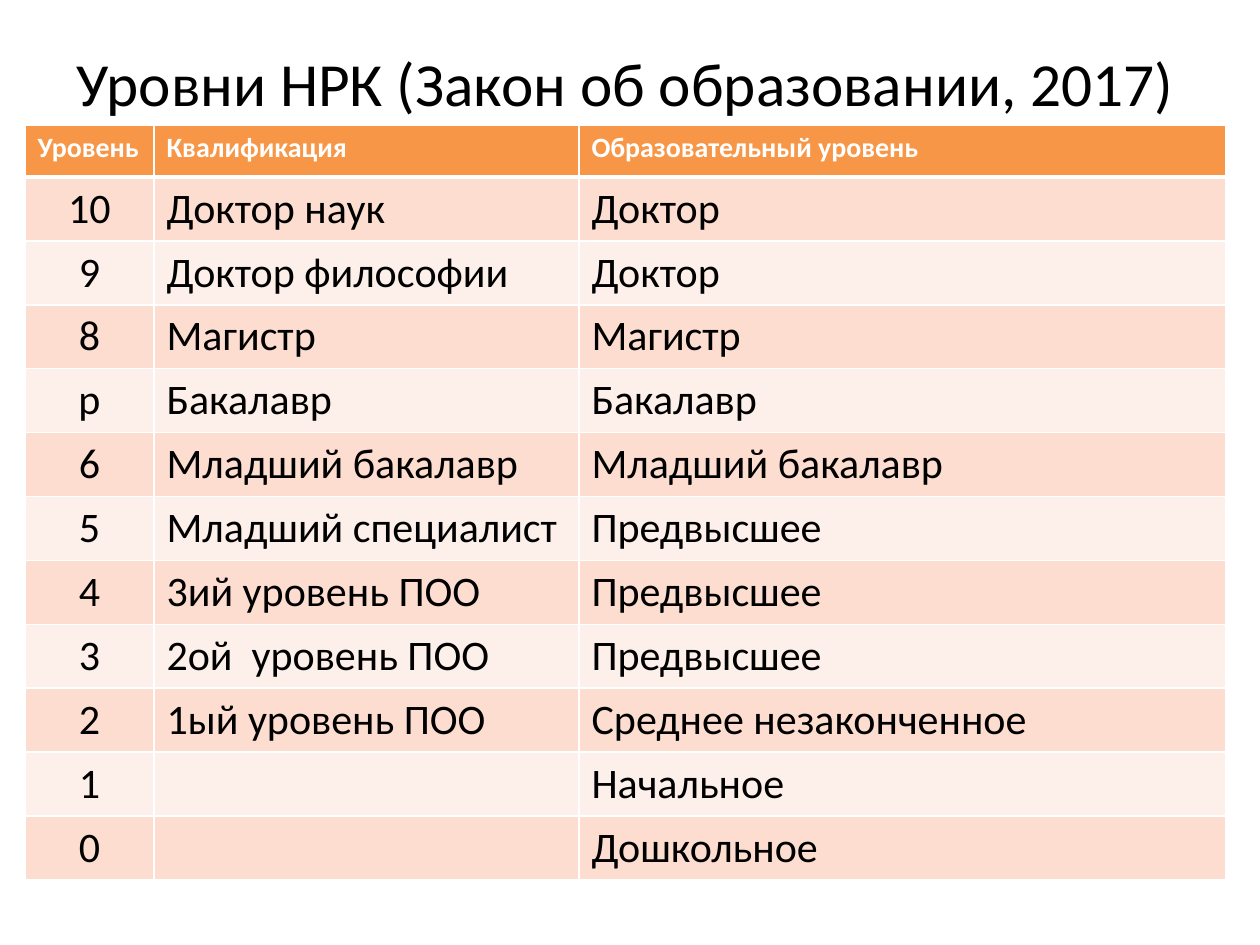
from dataclasses import dataclass

from lxml.etree import SubElement
from pptx import Presentation
from pptx.dml.color import RGBColor
from pptx.enum.text import MSO_ANCHOR, MSO_AUTO_SIZE, PP_ALIGN
from pptx.oxml.ns import qn
from pptx.util import Emu, Pt

PX_PER_INCH = 126
TITLE_ONLY = 5


@dataclass(frozen=True)
class Theme:
    font: str = "Calibri"
    text: str = "000000"
    header_text: str = "FFFFFF"
    header_fill: str = "F79646"
    bands: tuple = ("FCDDCF", "FDEFE9")
    border: str = "FFFFFF"
    title_size: int = 35
    header_size: int = 16
    body_size: int = 24


THEME = Theme()
TITLE = "Уровни НРК (Закон об образовании, 2017)"
HEADERS = ("Уровень", "Квалификация", "Образовательный уровень")
LEVELS = (
    ("10", "Доктор наук", "Доктор"),
    ("9", "Доктор философии", "Доктор"),
    ("8", "Магистр", "Магистр"),
    ("р", "Бакалавр", "Бакалавр"),
    ("6", "Младший бакалавр", "Младший бакалавр"),
    ("5", "Младший специалист", "Предвысшее"),
    ("4", "3ий уровень ПОО", "Предвысшее"),
    ("3", "2ой  уровень ПОО", "Предвысшее"),
    ("2", "1ый уровень ПОО", "Среднее незаконченное"),
    ("1", "", "Начальное"),
    ("0", "", "Дошкольное"),
)
COLUMN_WIDTHS = (129, 425, 647)
HEADER_HEIGHT, ROW_HEIGHT = 52, 63


def px(length):
    return Emu(round(length * 914400 / PX_PER_INCH))


def add_run(paragraph, text, size, color, bold=False):
    run = paragraph.add_run()
    run.text = text
    run.font.name = THEME.font
    run.font.size = Pt(size)
    run.font.bold = bold
    run.font.color.rgb = RGBColor.from_string(color)


def set_borders(cell, bottom_width):
    """Draw the cell's four lines; they must precede its fill in the XML."""
    properties = cell._tc.get_or_add_tcPr()
    for side, width in (("L", 1), ("R", 1), ("T", 1), ("B", bottom_width)):
        line = SubElement(properties, qn(f"a:ln{side}"), w=str(Pt(width)))
        fill = SubElement(line, qn("a:solidFill"))
        SubElement(fill, qn("a:srgbClr"), val=THEME.border)


def fill_cell(cell, text, size, color, fill, bold=False, centred=False, bottom_width=1):
    set_borders(cell, bottom_width)
    cell.fill.solid()
    cell.fill.fore_color.rgb = RGBColor.from_string(fill)
    paragraph = cell.text_frame.paragraphs[0]
    paragraph.alignment = PP_ALIGN.CENTER if centred else PP_ALIGN.LEFT
    if text:
        add_run(paragraph, text, size, color, bold)


def place_title(slide, left, top, width, height):
    title = slide.shapes.title
    title.left, title.top, title.width, title.height = map(px, (left, top, width, height))
    frame = title.text_frame
    frame.word_wrap = True
    frame.auto_size = MSO_AUTO_SIZE.NONE
    frame.vertical_anchor = MSO_ANCHOR.MIDDLE
    paragraph = frame.paragraphs[0]
    paragraph.alignment = PP_ALIGN.CENTER
    add_run(paragraph, TITLE, THEME.title_size, THEME.text)


def place_levels_table(slide, left, top):
    heights = [HEADER_HEIGHT] + [ROW_HEIGHT] * len(LEVELS)
    table = slide.shapes.add_table(
        len(heights), len(HEADERS),
        px(left), px(top), px(sum(COLUMN_WIDTHS)), px(sum(heights)),
    ).table
    for column, width in zip(table.columns, COLUMN_WIDTHS):
        column.width = px(width)
    for row, height in zip(table.rows, heights):
        row.height = px(height)

    for cell, text in zip(table.rows[0].cells, HEADERS):
        fill_cell(cell, text, THEME.header_size, THEME.header_text,
                  THEME.header_fill, bold=True, bottom_width=3)
    for row_index, level in enumerate(LEVELS):
        band = THEME.bands[row_index % 2]
        for column_index, text in enumerate(level):
            fill_cell(table.cell(row_index + 1, column_index), text,
                      THEME.body_size, THEME.text, band, centred=column_index == 0)


def main():
    presentation = Presentation()
    presentation.slide_width, presentation.slide_height = px(1260), px(945)
    slide = presentation.slides.add_slide(presentation.slide_layouts[TITLE_ONLY])
    place_title(slide, 25, 38, 1201, 87)
    place_levels_table(slide, 25, 125)
    presentation.save("out.pptx")


if __name__ == "__main__":
    main()
